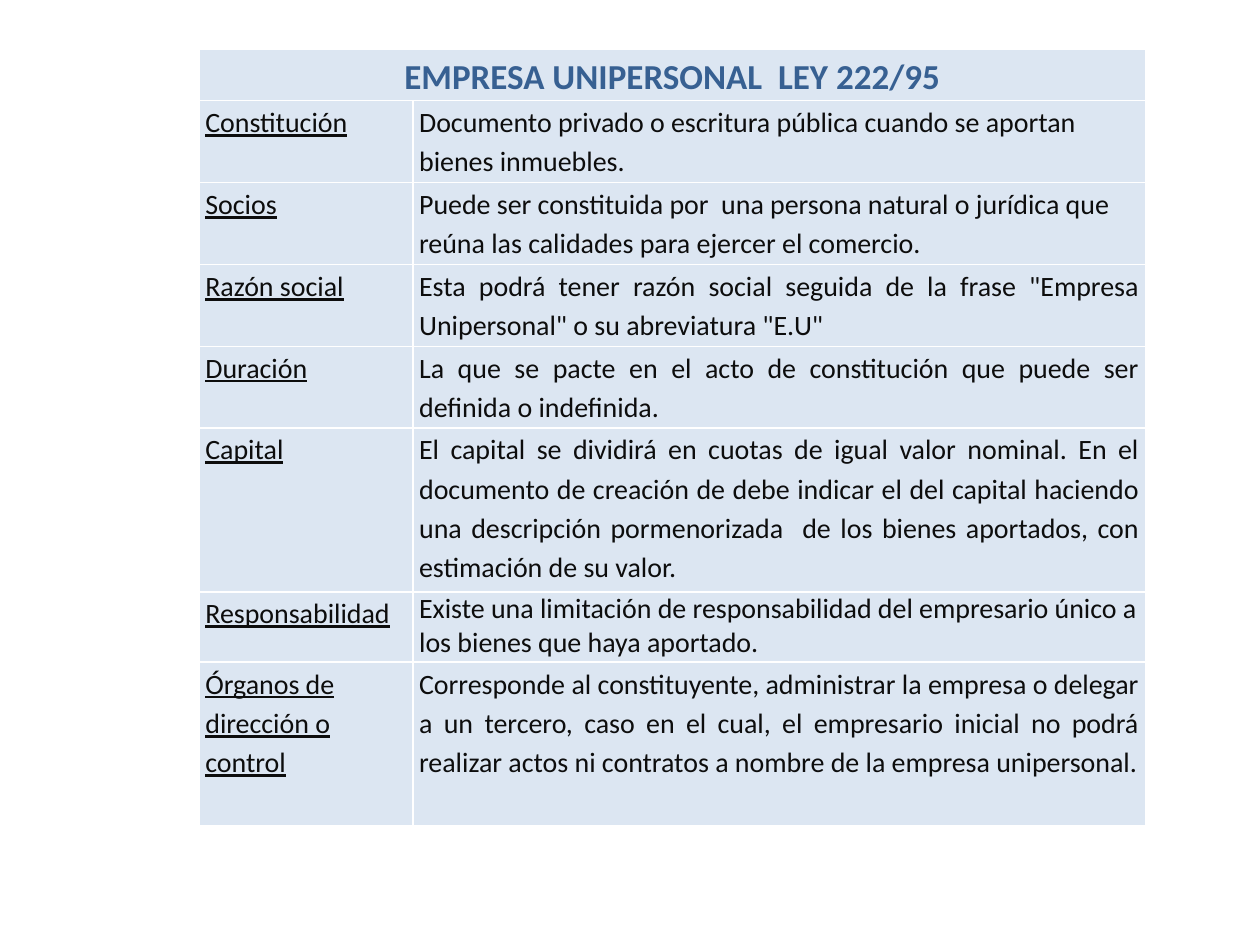
from lxml.etree import SubElement
from pptx import Presentation
from pptx.dml.color import RGBColor
from pptx.enum.text import PP_ALIGN
from pptx.oxml.ns import qn
from pptx.util import Cm, Pt

# Content: label, label alignment, row height (cm),
# then description, its alignment, line spacing and space after
LEFT, JUSTIFY, CENTER = PP_ALIGN.LEFT, PP_ALIGN.JUSTIFY, PP_ALIGN.CENTER
TITLE = "EMPRESA UNIPERSONAL  LEY 222/95"
ROWS = [
    ("Constitución", JUSTIFY, 1.65,
     "Documento privado o escritura pública cuando se aportan bienes inmuebles.",
     LEFT, 1.15, 0),
    ("Socios", JUSTIFY, 1.65,
     "Puede ser constituida por  una persona natural o jurídica que reúna las "
     "calidades para ejercer el comercio.",
     LEFT, 1.15, 0),
    ("Razón social", JUSTIFY, 1.65,
     'Esta podrá tener razón social seguida de la frase "Empresa Unipersonal" '
     'o su abreviatura "E.U"',
     JUSTIFY, 1.15, 7.5),
    ("Duración", JUSTIFY, 1.65,
     "La que se pacte en el acto de constitución que puede ser definida o indefinida.",
     JUSTIFY, 1.15, 7.5),
    ("Capital", JUSTIFY, 3.3,
     "El capital se dividirá en cuotas de igual valor nominal. En el documento de "
     "creación de debe indicar el del capital haciendo una descripción "
     "pormenorizada  de los bienes aportados, con estimación de su valor.",
     JUSTIFY, 1.15, 0),
    ("Responsabilidad", JUSTIFY, 1.42,
     "Existe una limitación de responsabilidad del empresario único a los bienes "
     "que haya aportado.",
     LEFT, 1.0, 0),
    ("Órganos de dirección o control", LEFT, 3.3,
     "Corresponde al constituyente, administrar la empresa o delegar a un tercero, "
     "caso en el cual, el empresario inicial no podrá realizar actos ni contratos a "
     "nombre de la empresa unipersonal.",
     JUSTIFY, 1.15, 10),
]
TITLE_HEIGHT = 1.03
COLUMN_WIDTHS = (4.31, 14.76)
TABLE_LEFT, TABLE_TOP = 4.02, 1.0
FILL, TITLE_COLOR, TEXT_COLOR, BORDER = "DCE6F2", "376092", "0D0D0D", "FFFFFF"


def color(value):
    return RGBColor.from_string(value)


def style_cell(cell):
    """Fill, insets and thin borders shared by every cell."""
    cell.margin_left = cell.margin_right = Cm(0.12)
    cell.margin_top = cell.margin_bottom = 0
    properties = cell._tc.get_or_add_tcPr()
    for side in ("lnL", "lnR", "lnT", "lnB"):
        line = SubElement(properties, qn(f"a:{side}"), w=str(Pt(1)))
        solid = SubElement(line, qn("a:solidFill"))
        SubElement(solid, qn("a:srgbClr"), val=BORDER)
    cell.fill.solid()
    cell.fill.fore_color.rgb = color(FILL)


def write(cell, text, alignment, spacing=1.15, after=10, size=16,
          text_color=TEXT_COLOR, bold=False, underline=False):
    paragraph = cell.text_frame.paragraphs[0]
    paragraph.alignment = alignment
    paragraph.line_spacing = spacing
    paragraph.space_after = Pt(after)
    run = paragraph.add_run()
    run.text = text
    font = run.font
    font.name, font.size = "Calibri", Pt(size)
    font.bold, font.underline = bold, underline
    font.color.rgb = color(text_color)


presentation = Presentation()
presentation.slide_width, presentation.slide_height = Cm(25.4), Cm(19.05)
slide = presentation.slides.add_slide(presentation.slide_layouts[6])

# Table grid
heights = [TITLE_HEIGHT] + [row[2] for row in ROWS]
table = slide.shapes.add_table(
    len(heights), len(COLUMN_WIDTHS), Cm(TABLE_LEFT), Cm(TABLE_TOP),
    Cm(sum(COLUMN_WIDTHS)), Cm(sum(heights))).table
table.horz_banding = False
table.first_row = False
for column, width in zip(table.columns, COLUMN_WIDTHS):
    column.width = Cm(width)
for row, height in zip(table.rows, heights):
    row.height = Cm(height)
for cell in table.iter_cells():
    style_cell(cell)

# Title across both columns
table.cell(0, 0).merge(table.cell(0, 1))
write(table.cell(0, 0), TITLE, CENTER, size=20, text_color=TITLE_COLOR, bold=True)

# Labels and descriptions
for index, row in enumerate(ROWS, start=1):
    label, label_alignment, _, description, alignment, spacing, after = row
    write(table.cell(index, 0), label, label_alignment, underline=True)
    write(table.cell(index, 1), description, alignment, spacing, after)

presentation.save("out.pptx")
